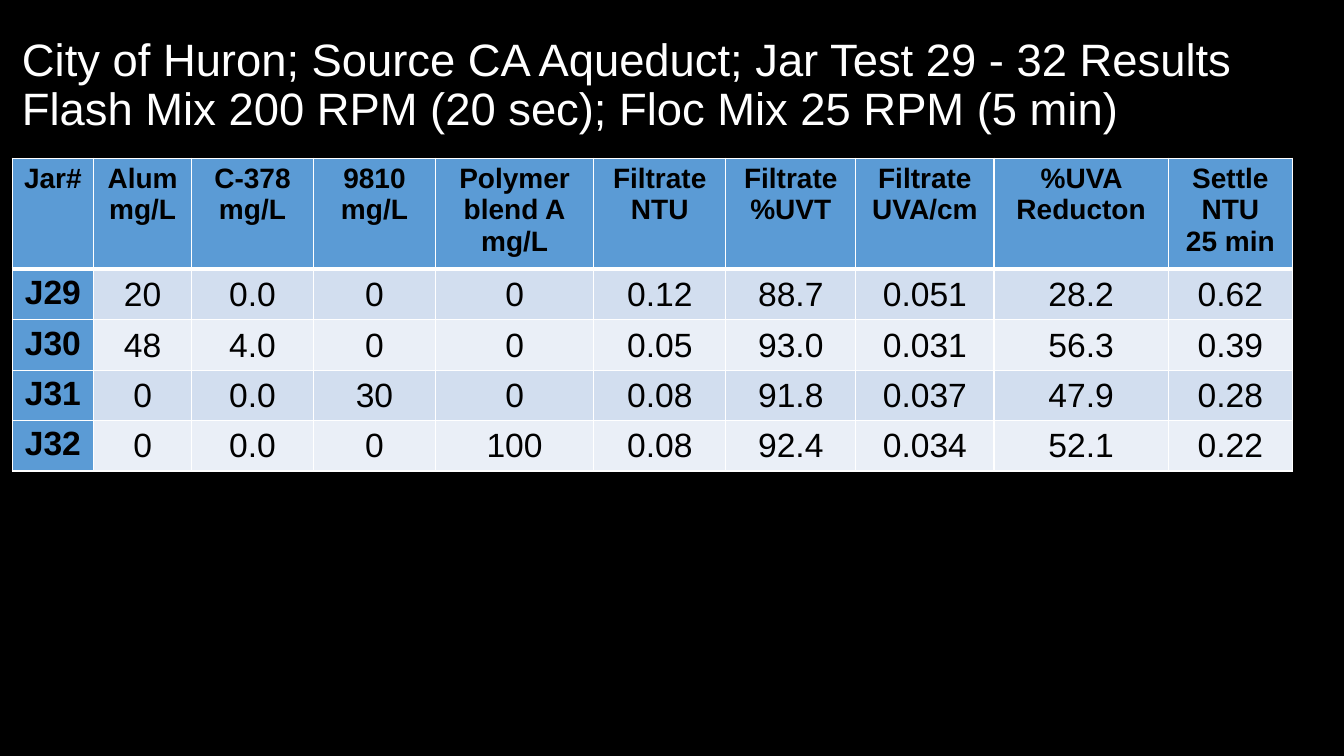
from lxml import etree
from pptx import Presentation
from pptx.dml.color import RGBColor
from pptx.enum import text
from pptx.oxml import ns
from pptx.util import Inches, Pt

FONT = "Arial"
BLACK, WHITE, BLUE = "000000", "FFFFFF", "5B9BD5"
BANDS = ("D2DEEF", "EAEFF7")

TITLE = ("City of Huron; Source CA Aqueduct; Jar Test 29 - 32 Results\v"
         "Flash Mix 200 RPM (20 sec); Floc Mix 25 RPM (5 min)")
COLUMN_WIDTHS = (0.81, 0.97, 1.21, 1.21, 1.57, 1.31, 1.29, 1.37, 1.73, 1.23)
ROW_HEIGHT = 0.41
JAR_TESTS = (
    ("Jar#", "Alum\nmg/L", "C-378\nmg/L", "9810\nmg/L", "Polymer\nblend A\nmg/L",
     "Filtrate\nNTU", "Filtrate\n%UVT", "Filtrate\nUVA/cm", "%UVA Reducton",
     "Settle\nNTU\n25 min"),
    ("J29", "20", "0.0", "0", "0", "0.12", "88.7", "0.051", "28.2", "0.62"),
    ("J30", "48", "4.0", "0", "0", "0.05", "93.0", "0.031", "56.3", "0.39"),
    ("J31", "0", "0.0", "30", "0", "0.08", "91.8", "0.037", "47.9", "0.28"),
    ("J32", "0", "0.0", "0", "100", "0.08", "92.4", "0.034", "52.1", "0.22"),
)


def color(hex_code):
    return RGBColor.from_string(hex_code)


def format_runs(frame, size, hex_code, bold=False):
    for paragraph in frame.paragraphs:
        for run in paragraph.runs:
            run.font.name = FONT
            run.font.size = Pt(size)
            run.font.bold = bold
            run.font.color.rgb = color(hex_code)


def set_borders(cell, top=1, bottom=1):
    """Draw white cell borders; widths are in points."""
    properties = cell._tc.get_or_add_tcPr()
    sides = (("lnL", 1), ("lnR", 1), ("lnT", top), ("lnB", bottom))
    for position, (side, width) in enumerate(sides):
        line = etree.Element(ns.qn(f"a:{side}"), w=str(Pt(width)))
        fill = etree.SubElement(line, ns.qn("a:solidFill"))
        etree.SubElement(fill, ns.qn("a:srgbClr"), val=WHITE)
        properties.insert(position, line)


def add_title(slide, left, top, width, height):
    box = slide.shapes.add_textbox(Inches(left), Inches(top), Inches(width), Inches(height))
    frame = box.text_frame
    frame.word_wrap = True
    frame.vertical_anchor = text.MSO_ANCHOR.MIDDLE
    frame.text = TITLE
    frame.paragraphs[0].line_spacing = 0.9
    format_runs(frame, 32.4, WHITE)


def fill_cell(cell, content, row, column):
    is_header, is_jar = row == 0, column == 0
    cell.text_frame.text = content
    for paragraph in cell.text_frame.paragraphs:
        paragraph.alignment = text.PP_ALIGN.CENTER
    format_runs(cell.text_frame, 20 if is_header else 24, BLACK, bold=is_header or is_jar)
    cell.fill.solid()
    cell.fill.fore_color.rgb = color(BLUE if is_header or is_jar else BANDS[(row - 1) % 2])
    if not (is_header or is_jar):
        cell.vertical_anchor = text.MSO_ANCHOR.MIDDLE
        cell.margin_left = cell.margin_top = cell.margin_right = Inches(0.01)
        cell.margin_bottom = 0
    set_borders(cell, top=3 if row == 1 else 1, bottom=3 if is_header else 1)


def add_results(slide, left, top, width, height):
    table = slide.shapes.add_table(len(JAR_TESTS), len(COLUMN_WIDTHS), Inches(left),
                                   Inches(top), Inches(width), Inches(height)).table
    for column, column_width in zip(table.columns, COLUMN_WIDTHS):
        column.width = Inches(column_width)
    for row, values in enumerate(JAR_TESTS):
        table.rows[row].height = Inches(ROW_HEIGHT)
        for column, content in enumerate(values):
            fill_cell(table.cell(row, column), content, row, column)


def main():
    deck = Presentation()
    deck.slide_width, deck.slide_height = Inches(13.33), Inches(7.5)
    slide = deck.slides.add_slide(deck.slide_layouts[6])
    slide.background.fill.solid()
    slide.background.fill.fore_color.rgb = color(BLACK)
    add_title(slide, 0.12, 0.13, 13.03, 1.45)
    add_results(slide, 0.12, 1.57, sum(COLUMN_WIDTHS), 3.1)
    deck.save("out.pptx")


if __name__ == "__main__":
    main()
